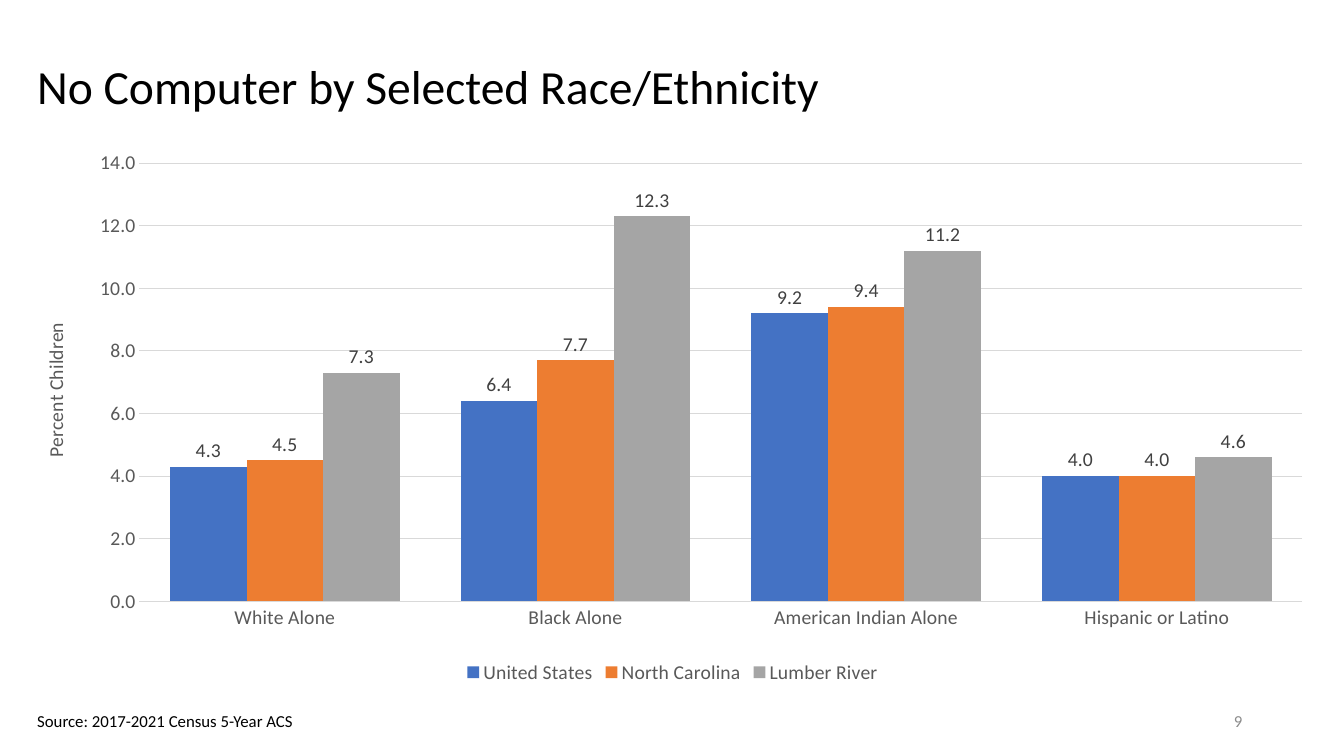
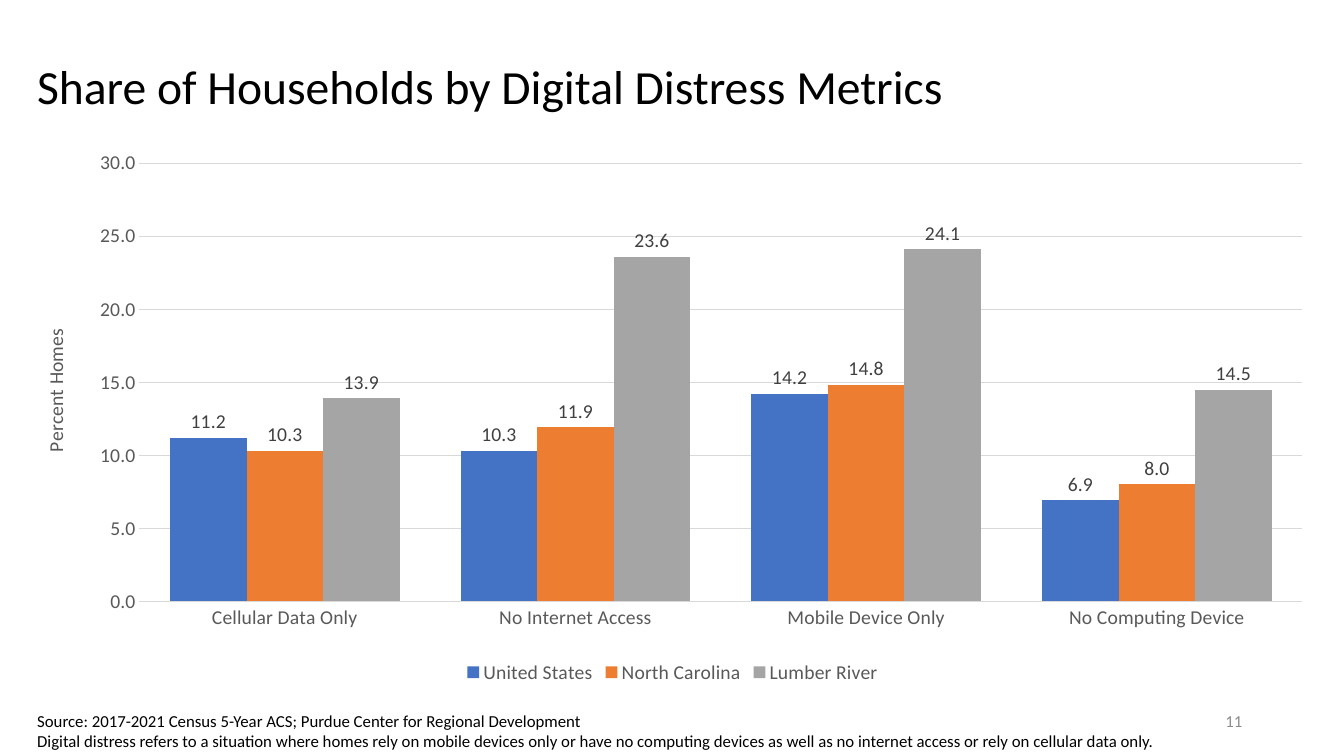
from lxml import etree
from pptx import Presentation
from pptx.chart.data import CategoryChartData
from pptx.dml.color import RGBColor
from pptx.enum.chart import (XL_CHART_TYPE, XL_LABEL_POSITION,
                             XL_LEGEND_POSITION, XL_TICK_MARK)
from pptx.enum.text import MSO_ANCHOR, MSO_AUTO_SIZE, PP_ALIGN
from pptx.oxml.ns import qn
from pptx.util import Inches, Pt

CLUSTERED = XL_CHART_TYPE.COLUMN_CLUSTERED
ABOVE_COLUMN = XL_LABEL_POSITION.OUTSIDE_END
LEGEND_BOTTOM = XL_LEGEND_POSITION.BOTTOM
NO_TICK = XL_TICK_MARK.NONE
TOP, MIDDLE = MSO_ANCHOR.TOP, MSO_ANCHOR.MIDDLE
LEFT, RIGHT = PP_ALIGN.LEFT, PP_ALIGN.RIGHT

FONT = "Calibri"
BLACK, AXIS_GRAY, LABEL_GRAY = "000000", "595959", "404040"
GRID_GRAY, PAGE_GRAY = "D9D9D9", "8C8C8C"
NUMBER_FORMAT = "#,##0.0"
MARGIN = 0.27
PLOT_AREA = {"x": 0.087, "y": 0.035, "w": 0.901, "h": 0.805}

REGIONS = [("United States", "4472C4"), ("North Carolina", "ED7D31"),
           ("Lumber River", "A5A5A5")]

SLIDES = [
    {
        "title": "No Computer by Selected Race/Ethnicity",
        "page": "9",
        "axis": ("Percent Children", 14, 2),
        "rows": [
            ("White Alone", (4.3, 4.5, 7.3)),
            ("Black Alone", (6.4, 7.7, 12.3)),
            ("American Indian Alone", (9.2, 9.4, 11.2)),
            ("Hispanic or Latino", (4.0, 4.0, 4.6)),
        ],
        "source": ["Source: 2017-2021 Census 5-Year ACS"],
        "source_size": (2.78, 0.3),
    },
    {
        "title": "Share of Households by Digital Distress Metrics",
        "page": "11",
        "axis": ("Percent Homes", 30, 5),
        "rows": [
            ("Cellular Data Only", (11.2, 10.3, 13.9)),
            ("No Internet Access", (10.3, 11.9, 23.6)),
            ("Mobile Device Only", (14.2, 14.8, 24.1)),
            ("No Computing Device", (6.9, 8.0, 14.5)),
        ],
        "source": [
            "Source: 2017-2021 Census 5-Year ACS; Purdue Center for Regional Development",
            "Digital distress refers to a situation where homes rely on mobile devices "
            "only or have no computing devices as well as no internet access or rely on "
            "cellular data only.",
        ],
        "source_size": (11.38, 0.5),
    },
]


def rgb(color):
    return RGBColor.from_string(color)


def style_font(font, size, color):
    font.name, font.size, font.bold = FONT, Pt(size), False
    font.color.rgb = rgb(color)


def style_line(line, color):
    line.color.rgb = rgb(color)
    line.width = Pt(0.75)


def add_text(slide, box, lines, size, color, anchor=MIDDLE, align=LEFT,
             spacing=1.0, wrap=True):
    frame = slide.shapes.add_textbox(*map(Inches, box)).text_frame
    frame.word_wrap = wrap
    frame.auto_size = MSO_AUTO_SIZE.NONE if wrap else MSO_AUTO_SIZE.SHAPE_TO_FIT_TEXT
    frame.vertical_anchor = anchor
    frame.text = "\n".join(lines)
    for paragraph in frame.paragraphs:
        paragraph.alignment = align
        paragraph.line_spacing = spacing
        for run in paragraph.runs:
            style_font(run.font, size, color)


def place_plot_area(chart):
    """Fix the inner plot area as fractions of the chart."""
    plot_area = chart.element.find(".//" + qn("c:plotArea"))
    for old_layout in plot_area.findall(qn("c:layout")):
        plot_area.remove(old_layout)
    layout = etree.Element(qn("c:layout"))
    manual = etree.SubElement(layout, qn("c:manualLayout"))
    settings = {"layoutTarget": "inner", "xMode": "edge", "yMode": "edge", **PLOT_AREA}
    for tag, value in settings.items():
        etree.SubElement(manual, qn("c:" + tag)).set("val", str(value))
    plot_area.insert(0, layout)


def style_axes(chart, title, maximum, step):
    categories, values = chart.category_axis, chart.value_axis
    for axis in (categories, values):
        axis.major_tick_mark = axis.minor_tick_mark = NO_TICK
        style_font(axis.tick_labels.font, 14, AXIS_GRAY)
    style_line(categories.format.line, GRID_GRAY)
    values.format.line.fill.background()
    style_line(values.major_gridlines.format.line, GRID_GRAY)
    values.minimum_scale, values.maximum_scale = 0, maximum
    values.major_unit = step
    values.tick_labels.number_format = NUMBER_FORMAT
    values.tick_labels.number_format_is_linked = False
    frame = values.axis_title.text_frame
    frame.text = title
    style_font(frame.paragraphs[0].runs[0].font, 14, AXIS_GRAY)
    body = chart.element.find(".//" + qn("c:valAx")).find(
        qn("c:title") + "//" + qn("a:bodyPr"))
    body.set("rot", "-5400000")
    body.set("vert", "horz")


def add_column_chart(slide, rows, axis):
    data = CategoryChartData(number_format=NUMBER_FORMAT)
    data.categories = [category for category, _ in rows]
    for index, (region, _) in enumerate(REGIONS):
        data.add_series(region, [shares[index] for _, shares in rows])
    box = map(Inches, (MARGIN, 1.43, 12.8, 5.4))
    chart = slide.shapes.add_chart(CLUSTERED, *box, data).chart
    chart.has_title = False
    style_font(chart.font, 14, BLACK)
    place_plot_area(chart)
    style_axes(chart, *axis)

    chart.has_legend = True
    chart.legend.position = LEGEND_BOTTOM
    chart.legend.include_in_layout = False
    style_font(chart.legend.font, 14, AXIS_GRAY)

    plot = chart.plots[0]
    plot.gap_width, plot.overlap = 80, 0
    plot.vary_by_categories = False
    for series, (_, color) in zip(plot.series, REGIONS):
        series.invert_if_negative = False
        series.format.fill.solid()
        series.format.fill.fore_color.rgb = rgb(color)
        labels = series.data_labels
        labels.show_value = True
        labels.position = ABOVE_COLUMN
        labels.number_format = NUMBER_FORMAT
        labels.number_format_is_linked = False
        style_font(labels.font, 14, LABEL_GRAY)


def main():
    deck = Presentation()
    deck.slide_width, deck.slide_height = Inches(13.33), Inches(7.5)
    for content in SLIDES:
        slide = deck.slides.add_slide(deck.slide_layouts[6])
        add_text(slide, (MARGIN, 0.34, 12.76, 1.09), [content["title"]], 34, BLACK,
                 spacing=0.9)
        add_text(slide, (9.42, 6.95, 3, 0.4), [content["page"]], 12, PAGE_GRAY,
                 align=RIGHT)
        add_column_chart(slide, content["rows"], content["axis"])
        add_text(slide, (MARGIN, 7, *content["source_size"]), content["source"], 12,
                 BLACK, anchor=TOP, wrap=False)
    deck.save("out.pptx")


if __name__ == "__main__":
    main()
